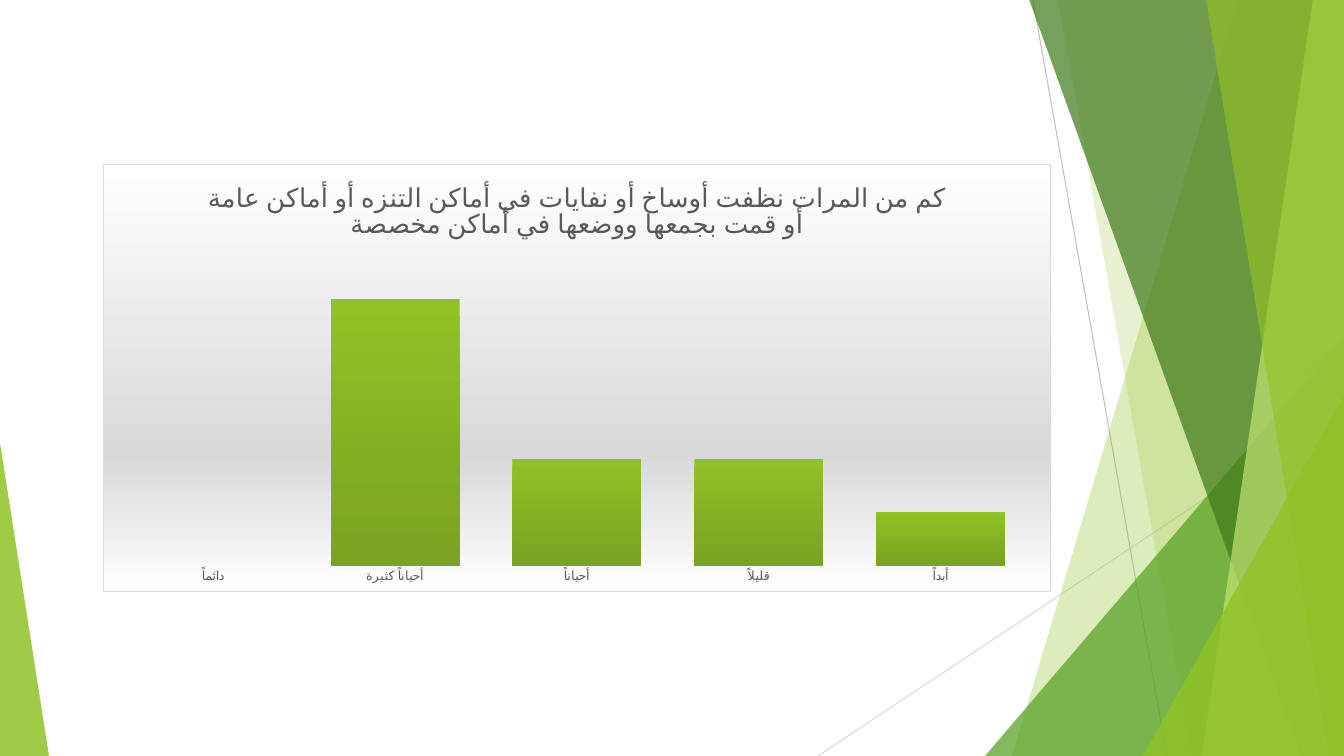
from dataclasses import dataclass
from typing import Any

from lxml.etree import SubElement
from pptx import Presentation
from pptx.chart.data import CategoryChartData
from pptx.dml.color import RGBColor
from pptx.enum.chart import XL_CHART_TYPE as ChartType, XL_TICK_MARK as TickMark
from pptx.enum.shapes import MSO_CONNECTOR as Connector, MSO_SHAPE as Shape
from pptx.oxml import parse_xml
from pptx.oxml.ns import nsdecls, qn
from pptx.util import Pt

EMU_PER_PX = 914400 / 100.8
WIDTH, HEIGHT = 1344, 756
FONT = "Lato"
GREEN, GRAY, SILVER, WHITE = "90C226", "595959", "D9D9D9", "FFFFFF"
TITLE = (
    "كم من المرات نظفت أوساخ أو نفايات في أماكن التنزه أو أماكن عامة أو "
    "قمت بجمعها ووضعها في أماكن مخصصة"
)
ANSWERS = {"دائماً": 0, "أحياناً كثيرة": 100, "أحياناً": 40, "قليلاً": 40, "أبداً": 20}
CHART_BOX = (103, 164, 948, 428)
PLOT_LAYOUT = {"x": 0.02, "y": 0.19, "w": 0.96, "h": 0.75}


@dataclass(frozen=True)
class Ray:
    start: tuple[int, int]
    end: tuple[int, int]
    color: str


@dataclass(frozen=True)
class Facet:
    top: int
    bottom: int
    color: str
    opacity: int


@dataclass(frozen=True)
class Wedge:
    left: int
    top: int
    width: int
    apex: int
    color: str
    opacity: int


RAYS = (
    Ray((1033, 0), (1167, HEIGHT), "BFBFBF"),
    Ray((WIDTH, 406), (818, HEIGHT), SILVER),
)
PANELS = (
    Facet(1238, 1012, GREEN, 30),
    Facet(1058, 1192, GREEN, 20),
    Wedge(985, 336, 359, 1, "54A021", 72),
    Facet(1029, 1301, "3F7819", 70),
    Facet(1313, 1202, "C0E474", 70),
    Facet(1206, 1329, GREEN, 65),
    Wedge(1143, 396, 201, 1, GREEN, 80),
    Wedge(0, 443, 49, 0, GREEN, 85),
)


def px(length: int) -> int:
    return round(length * EMU_PER_PX)


def rgb(color: str) -> RGBColor:
    return RGBColor.from_string(color)


def apply_format(target: Any, values: dict[str, Any]) -> None:
    for name, value in values.items():
        setattr(target, name, value)


def style_font(font: Any, size: float, color: str) -> None:
    apply_format(font, {"name": FONT, "size": Pt(size), "bold": False})
    font.color.rgb = rgb(color)


def draw_ray(slide: Any, ray: Ray) -> None:
    ends = [px(value) for value in (*ray.start, *ray.end)]
    connector = slide.shapes.add_connector(Connector.STRAIGHT, *ends)
    connector.line.color.rgb = rgb(ray.color)
    connector.line.width = Pt(0.75)
    SubElement(connector._element.spPr, qn("a:effectLst"))


def add_facet(slide: Any, facet: Facet) -> Any:
    builder = slide.shapes.build_freeform(facet.top, -1, scale=EMU_PER_PX)
    builder.add_line_segments([(WIDTH, -1), (WIDTH, HEIGHT), (facet.bottom, HEIGHT)])
    return builder.convert_to_shape()


def add_wedge(slide: Any, wedge: Wedge) -> Any:
    box = (wedge.left, wedge.top, wedge.width, HEIGHT - wedge.top)
    shape = slide.shapes.add_shape(Shape.ISOSCELES_TRIANGLE, *map(px, box))
    shape.adjustments[0] = wedge.apex
    return shape


def draw_panel(slide: Any, panel: Facet | Wedge) -> None:
    shape = add_facet(slide, panel) if isinstance(panel, Facet) else add_wedge(slide, panel)
    shape.shadow.inherit = False
    shape.line.fill.background()
    shape.fill.solid()
    shape.fill.fore_color.rgb = rgb(panel.color)
    color = shape._element.spPr.find(f"{qn('a:solidFill')}/{qn('a:srgbClr')}")
    SubElement(color, qn("a:alpha"), val=str(panel.opacity * 1000))


def gradient_properties(stops: dict[int, str], border: str = "") -> Any:
    stop_xml = "".join(
        f'<a:gs pos="{position * 1000}"><a:srgbClr val="{color}"/></a:gs>'
        for position, color in stops.items()
    )
    line_fill = f'<a:solidFill><a:srgbClr val="{border}"/></a:solidFill>' if border else "<a:noFill/>"
    return parse_xml(
        f'<c:spPr {nsdecls("c", "a")}><a:gradFill><a:gsLst>{stop_xml}</a:gsLst>'
        f'<a:lin ang="5400000" scaled="0"/></a:gradFill>'
        f'<a:ln w="{Pt(0.75)}">{line_fill}</a:ln></c:spPr>'
    )


def set_plot_layout(chart: Any) -> None:
    plot_area = chart._chartSpace.chart.plotArea
    for layout in plot_area.findall(qn("c:layout")):
        plot_area.remove(layout)
    layout = SubElement(plot_area, qn("c:layout"))
    plot_area.insert(0, layout)
    manual = SubElement(layout, qn("c:manualLayout"))
    settings = {"layoutTarget": "inner", "xMode": "edge", "yMode": "edge", **PLOT_LAYOUT}
    for name, value in settings.items():
        SubElement(manual, qn(f"c:{name}"), val=str(value))


def draw_chart(slide: Any) -> None:
    data = CategoryChartData()
    data.categories = list(ANSWERS)
    data.add_series("Series 1", list(ANSWERS.values()))
    frame = slide.shapes.add_chart(ChartType.COLUMN_CLUSTERED, *map(px, CHART_BOX), data)
    chart = frame.chart
    style_font(chart.font, 10, "000000")
    chart.has_legend = False
    chart.has_title = True
    paragraph = chart.chart_title.text_frame.paragraphs[0]
    run = paragraph.add_run()
    run.text = TITLE
    style_font(run.font, 18.6, GRAY)
    chart.chart_title.include_in_layout = False

    plot = chart.plots[0]
    apply_format(plot, {"gap_width": 41, "vary_by_categories": False})
    bars = plot.series[0]
    bars.invert_if_negative = False
    series_element = bars._element
    series_element.get_or_add_spPr()
    series_element.replace(series_element.spPr, gradient_properties({0: GREEN, 100: "79A320"}))

    no_ticks = {"major_tick_mark": TickMark.NONE, "minor_tick_mark": TickMark.NONE}
    apply_format(chart.category_axis, {**no_ticks, "has_major_gridlines": False})
    style_font(chart.category_axis.tick_labels.font, 9, GRAY)
    chart.category_axis.format.line.fill.background()
    value_format = {
        "minimum_scale": 0,
        "maximum_scale": 120,
        "has_major_gridlines": False,
        "visible": False,
    }
    apply_format(chart.value_axis, value_format)
    set_plot_layout(chart)
    background = gradient_properties({0: WHITE, 68: SILVER, 100: WHITE}, SILVER)
    chart._chartSpace.chart.addnext(background)


def main() -> None:
    presentation = Presentation()
    apply_format(presentation, {"slide_width": px(WIDTH), "slide_height": px(HEIGHT)})
    slide = presentation.slides.add_slide(presentation.slide_layouts[6])
    slide.background.fill.solid()
    slide.background.fill.fore_color.rgb = rgb(WHITE)
    for ray in RAYS:
        draw_ray(slide, ray)
    for panel in PANELS:
        draw_panel(slide, panel)
    draw_chart(slide)
    presentation.save("out.pptx")


if __name__ == "__main__":
    main()
